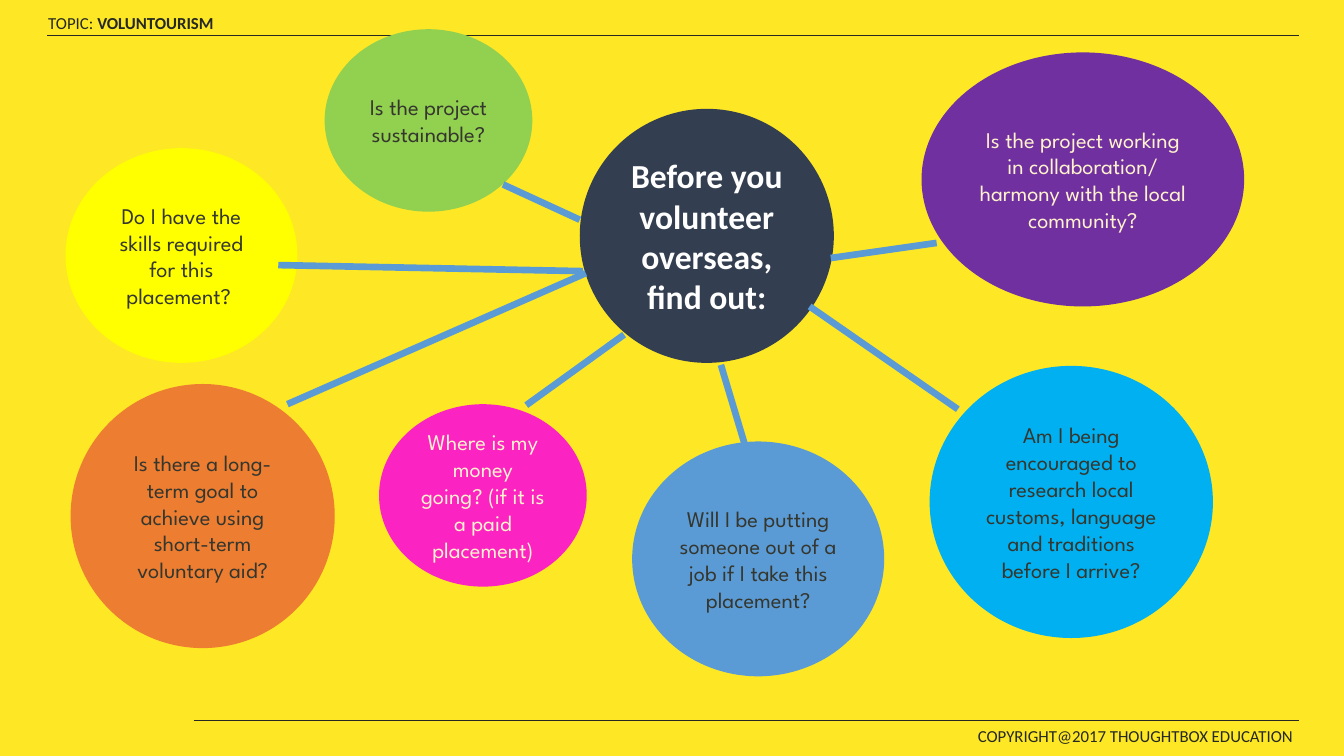
from lxml import etree
from pptx import Presentation
from pptx import util as u
from pptx.dml.color import RGBColor
from pptx.enum import shapes, text
from pptx.oxml.ns import qn

INK, DARK, CREAM, BLUE = "252823", "35372F", "FFF2CC", "5B9BD5"

QUESTIONS = [
    ((3.22, 0.29, 2.06, 1.81), "92D050", DARK, "Is the project sustainable?"),
    ((9.14, 0.52, 3.2, 2.52), "7030A0", CREAM,
     "Is the project working in collaboration/ harmony with the local community?"),
    ((9.22, 3.63, 2.81, 2.7), "00B0F0", DARK,
     "Am I being encouraged to research local customs, language and traditions before I arrive?"),
    ((0.7, 3.81, 2.62, 2.62), "ED7D31", DARK,
     "Is there a long-term goal to achieve using short-term voluntary aid?"),
    ((0.65, 1.47, 2.3, 2.13), "FFFF00", DARK,
     "Do I have the skills required for this placement? "),
    ((6.27, 4.38, 2.5, 2.33), BLUE, DARK,
     "Will I be putting someone out of a job if I take this placement?"),
    ((3.76, 4.01, 2.06, 1.81), "FB23C2", CREAM,
     "Where is my money going? (if it is a paid placement)"),
]

SPOKES = [
    ((5.75, 2.18), (4.99, 1.83)),
    ((9.29, 2.41), (8.24, 2.56)),
    ((9.5, 4.06), (8.03, 3.04)),
    ((7.39, 4.42), (7.15, 3.62)),
    ((6.19, 3.32), (5.22, 4.02)),
    ((5.78, 2.69), (2.76, 2.63)),
    ((5.81, 2.71), (2.85, 4.01)),
]


def rgb(value):
    return RGBColor.from_string(value)


def add_run(p, words, font="Calibri", size=12, color=INK, bold=False):
    r = p.add_run()
    r.text = words
    r.font.name = font
    r.font.size = u.Pt(size)
    r.font.bold = bold
    r.font.color.rgb = rgb(color)


def add_line(s, start, end, color, width):
    ends = [u.Inches(v) for v in (*start, *end)]
    ln = s.shapes.add_connector(shapes.MSO_CONNECTOR.STRAIGHT, *ends)
    ln.line.color.rgb = rgb(color)
    ln.line.width = u.Pt(width)
    etree.SubElement(ln._element.spPr, qn("a:effectLst"))


def add_label(s, box, wrap=True):
    tf = s.shapes.add_textbox(*map(u.Inches, box)).text_frame
    tf.word_wrap = wrap
    return tf.paragraphs[0]


def add_bubble(s, box, fill, words, **fmt):
    sp = s.shapes.add_shape(shapes.MSO_SHAPE.OVAL, *map(u.Inches, box))
    sp.shadow.inherit = False
    sp.fill.solid()
    sp.fill.fore_color.rgb = rgb(fill)
    sp.line.fill.background()
    tf = sp.text_frame
    tf.word_wrap = True
    tf.vertical_anchor = text.MSO_ANCHOR.MIDDLE
    p = tf.paragraphs[0]
    p.alignment = text.PP_ALIGN.CENTER
    add_run(p, words, **fmt)


def add_header(s, x, y, w):
    p = add_label(s, (x - 0.09, y - 0.27, 1.91, 0.3), wrap=False)
    add_run(p, "TOPIC: ")
    add_run(p, "VOLUNTOURISM", bold=True)
    add_line(s, (x, y), (x + w, y), INK, 1)


def add_footer(s, x, y, w):
    p = add_label(s, (x + w - 3.28, y, 3.4, 0.31))
    add_run(p, "COPYRIGHT@2017 THOUGHTBOX EDUCATION")
    add_line(s, (x, y), (x + w, y), INK, 1)


def add_mind_map(s, hub):
    add_bubble(s, hub, "333F50", "Before you volunteer overseas, find out:",
               size=24, color="FFFFFF", bold=True)
    for box, fill, color, words in QUESTIONS:
        add_bubble(s, box, fill, words, font="League Spartan", size=16, color=color)
    for start, end in SPOKES:
        add_line(s, start, end, BLUE, 4.75)


def main():
    prs = Presentation()
    prs.slide_width, prs.slide_height = u.Inches(13.33), u.Inches(7.5)
    s = prs.slides.add_slide(prs.slide_layouts[6])
    s.background.fill.solid()
    s.background.fill.fore_color.rgb = rgb("FEE725")
    add_header(s, 0.47, 0.35, 12.41)
    add_footer(s, 1.92, 7.15, 10.96)
    add_mind_map(s, (5.75, 1.08, 2.52, 2.52))
    prs.save("out.pptx")


if __name__ == "__main__":
    main()
